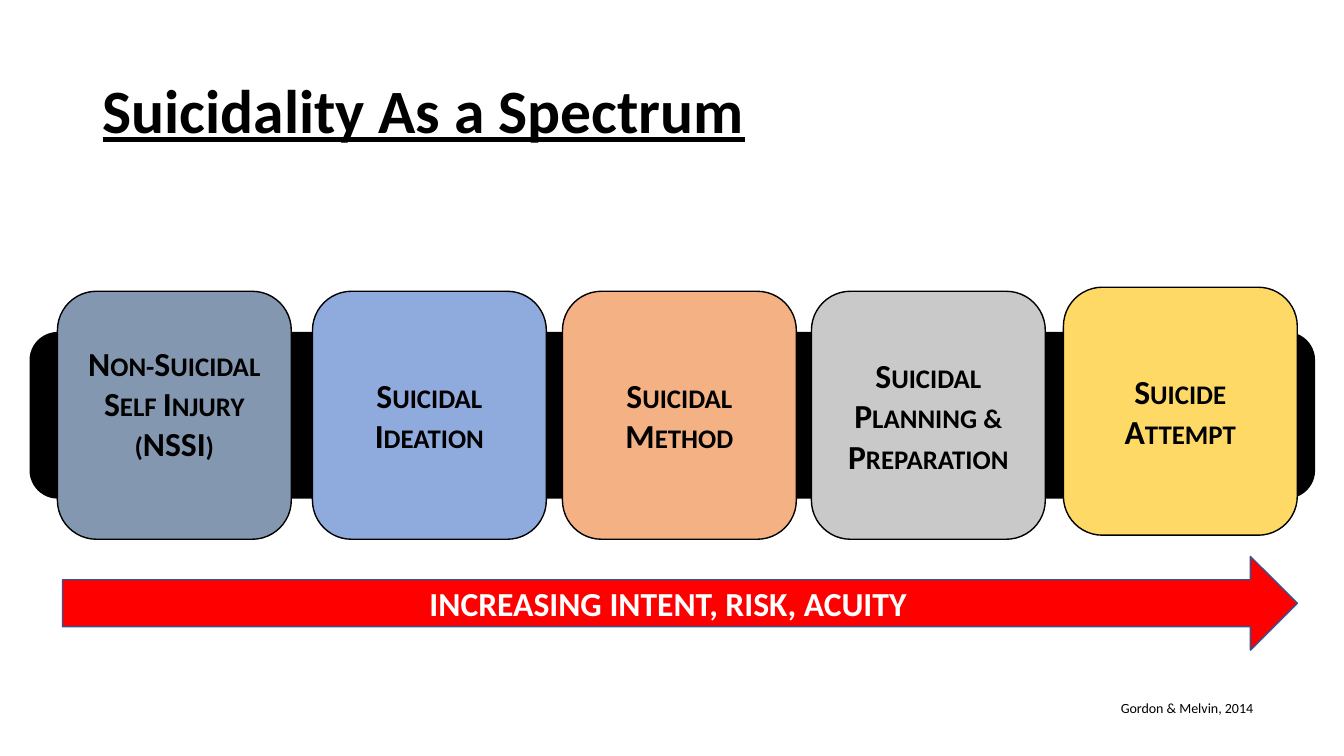
from pptx import Presentation
from pptx import util as u
from pptx.dml.color import RGBColor
from pptx.enum import shapes, text

COLUMNS, ROWS = 160, 90
WIDTH, HEIGHT = u.Inches(13.33), u.Inches(7.5)
COLORS = {
    "black": "000000", "white": "FFFFFF", "red": "FF0000", "navy": "325491",
    "slate": "8497B0", "blue": "8FAADC", "orange": "F4B183",
    "gray": "C9C9C9", "yellow": "FFD966",
}
CARD_WIDTH, CARD_HEIGHT = 27.84, 29.52
CARD_TOP, RAISED_TOP = 34.68, 34.2
CARDS = [
    ("Non-Suicidal Self Injury (NSSI)", "slate", 6.84, CARD_TOP),
    ("Suicidal Ideation", "blue", 37.2, CARD_TOP),
    ("Suicidal Method", "orange", 66.96, CARD_TOP),
    ("Suicidal Planning & Preparation", "gray", 96.6, CARD_TOP),
    ("Suicide Attempt", "yellow", 126.6, RAISED_TOP),
]


def color(name):
    return RGBColor.from_string(COLORS[name])


def place(column, row, columns, rows):
    return (round(WIDTH * column / COLUMNS), round(HEIGHT * row / ROWS),
            round(WIDTH * columns / COLUMNS), round(HEIGHT * rows / ROWS))


def write(shape, words, size, ink="black", bold=True, underline=False,
          align=text.PP_ALIGN.LEFT, anchor=text.MSO_ANCHOR.MIDDLE, small_caps=False):
    frame = shape.text_frame
    frame.word_wrap = True
    frame.vertical_anchor = anchor
    frame.text = words
    paragraph = frame.paragraphs[0]
    paragraph.alignment = align
    run = paragraph.runs[0]
    run.font.name = "Calibri"
    run.font.size = u.Pt(size)
    run.font.bold = bold
    run.font.underline = underline
    run.font.color.rgb = color(ink)
    if small_caps:
        run._r.get_or_add_rPr().set("cap", "small")
    return paragraph


def add_block(slide, kind, area, fill, line="black"):
    shape = slide.shapes.add_shape(kind, *place(*area))
    shape.shadow.inherit = False
    shape.fill.solid()
    shape.fill.fore_color.rgb = color(fill)
    shape.line.color.rgb = color(line)
    shape.line.width = u.Pt(1)
    return shape


def add_title(slide, words):
    box = slide.shapes.add_textbox(*place(11.04, 4.8, 138, 17.4))
    write(box, words, 44, underline=True).line_spacing = 0.9


def add_card(slide, words, fill, column, row):
    card = add_block(slide, shapes.MSO_SHAPE.ROUNDED_RECTANGLE,
                     (column, row, CARD_WIDTH, CARD_HEIGHT), fill)
    write(card, words, 24, align=text.PP_ALIGN.CENTER, small_caps=True)
    return card


def add_spectrum(slide):
    add_block(slide, shapes.MSO_SHAPE.ROUNDED_RECTANGLE, (3.6, 39.6, 152.88, 19.68), "black")
    cards = [add_card(slide, *card) for card in CARDS]
    cards[0].text_frame.margin_bottom = u.Inches(0.29)


def add_arrow(slide, words):
    arrow = add_block(slide, shapes.MSO_SHAPE.RIGHT_ARROW, (7.44, 66.24, 147, 11.16), "red", "navy")
    write(arrow, words, 24, ink="white", align=text.PP_ALIGN.CENTER)


def add_citation(slide, words):
    box = slide.shapes.add_textbox(*place(132.24, 82.68, 27.84, 3.24))
    write(box, words, 10, bold=False, anchor=text.MSO_ANCHOR.TOP)


def main():
    """Build the suicidality spectrum slide."""
    presentation = Presentation()
    presentation.slide_width, presentation.slide_height = WIDTH, HEIGHT
    slide = presentation.slides.add_slide(presentation.slide_layouts[6])
    add_title(slide, "Suicidality As a Spectrum")
    add_spectrum(slide)
    add_arrow(slide, "INCREASING INTENT, RISK, ACUITY")
    add_citation(slide, "Gordon & Melvin, 2014")
    presentation.save("out.pptx")


if __name__ == "__main__":
    main()
